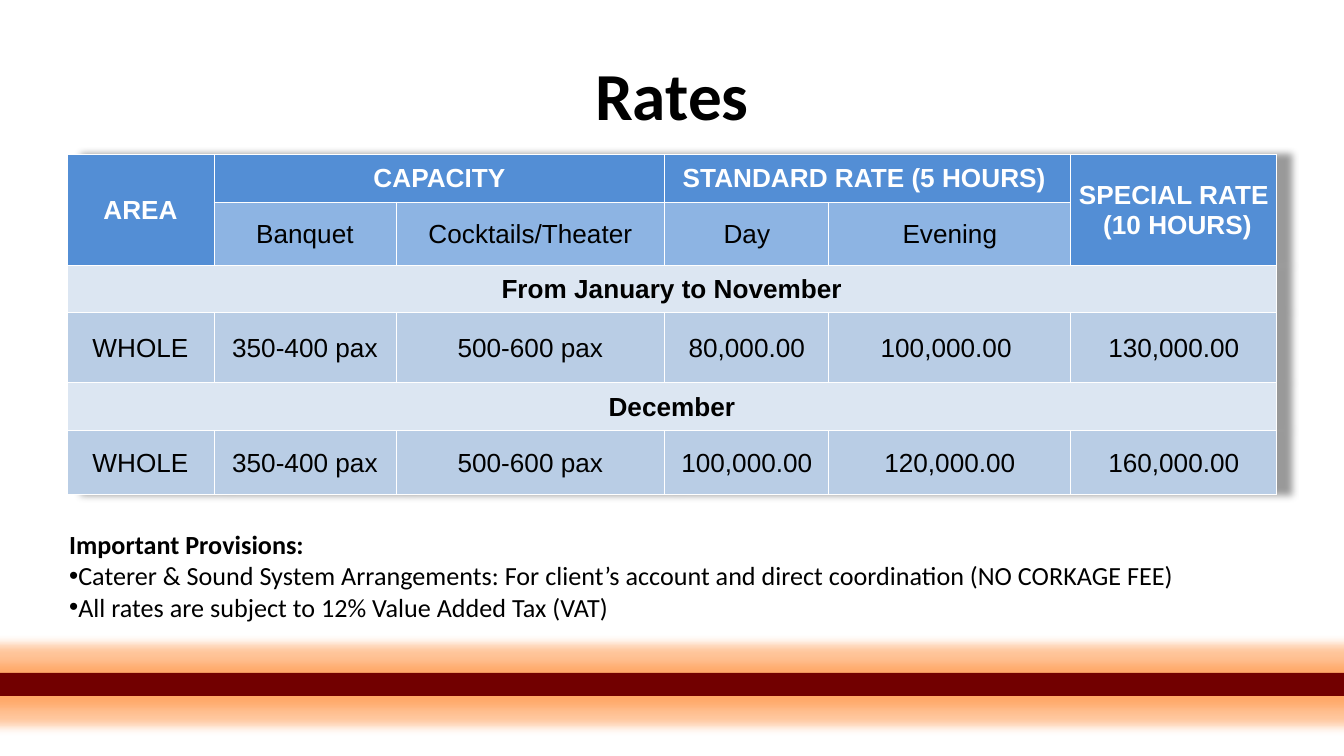
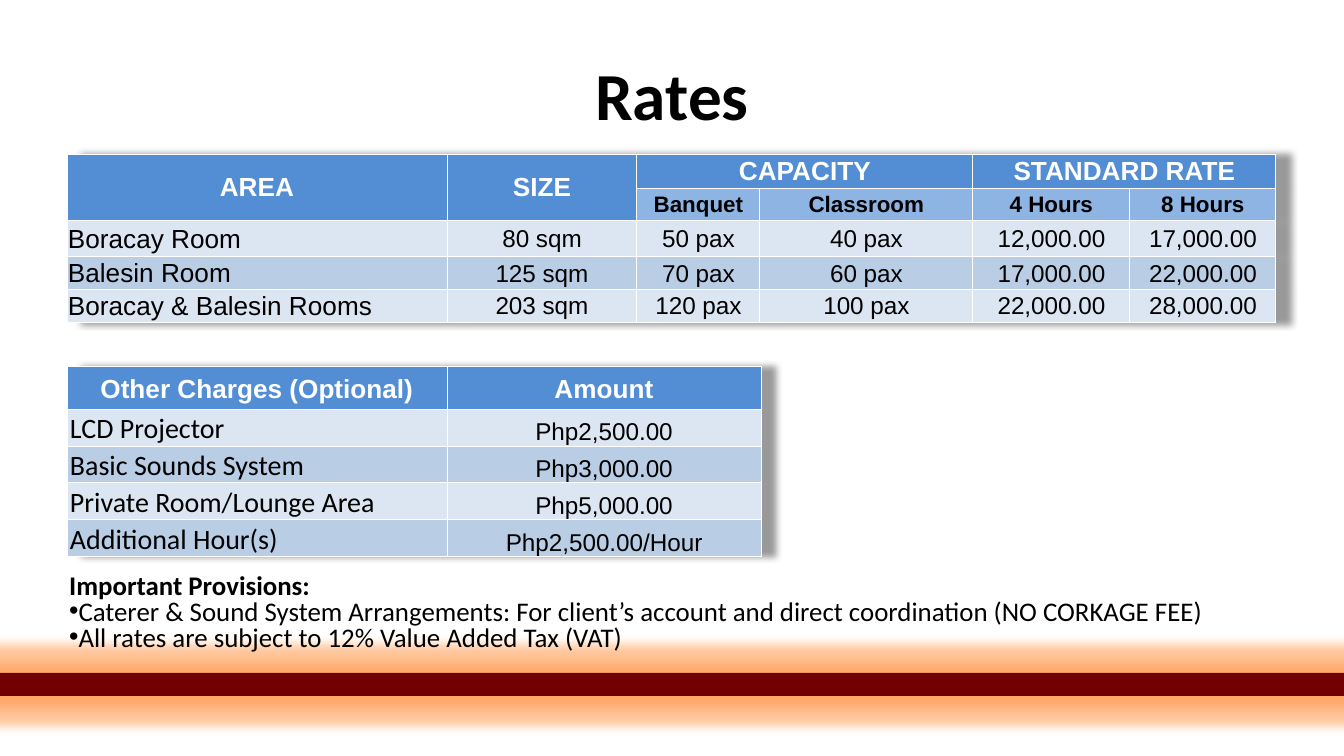
from dataclasses import dataclass, replace
from typing import Optional

from lxml.etree import SubElement
from pptx import Presentation
from pptx.dml.color import RGBColor
from pptx.enum.shapes import MSO_SHAPE
from pptx.enum.text import MSO_ANCHOR, PP_ALIGN
from pptx.oxml import parse_xml
from pptx.oxml.ns import nsdecls, qn
from pptx.util import Pt

COLORS = {
    "black": "000000",
    "white": "FFFFFF",
    "maroon": "720000",
    "glow": "FF8B35",
    "header": "538ED5",
    "subheader": "8DB4E3",
    "light": "DCE6F2",
    "medium": "B9CDE5",
}
PX_PER_INCH = 134.4
SLIDE_WIDTH, SLIDE_HEIGHT = 1344, 756
MARGIN, CONTENT_WIDTH = 67, 1210
LEFT, UP = "<", "^"

PROVISIONS = [
    "Important Provisions:",
    "Caterer & Sound System Arrangements: For client’s account and direct coordination (NO CORKAGE FEE)",
    "All rates are subject to 12% Value Added Tax (VAT)",
]


def px(value: int) -> int:
    return round(value * 914400 / PX_PER_INCH)


def rgb(name: str) -> RGBColor:
    return RGBColor.from_string(COLORS[name])


@dataclass(frozen=True)
class CellStyle:
    fill: str
    color: str = "black"
    size: float = 14
    bold: bool = False
    font: str = "Arial"
    align: PP_ALIGN = PP_ALIGN.CENTER
    anchor: MSO_ANCHOR = MSO_ANCHOR.MIDDLE


@dataclass(frozen=True)
class Row:
    height: int
    texts: list[str]
    style: CellStyle
    first: Optional[CellStyle] = None


@dataclass(frozen=True)
class RateTable:
    top: int
    columns: list[int]
    rows: list[Row]
    inset: int = 1


@dataclass(frozen=True)
class Provisions:
    top: int
    height: int
    size: float
    line_spacing: float


@dataclass(frozen=True)
class RateSlide:
    tables: list[RateTable]
    provisions: Provisions


HEADER = CellStyle("header", "white", bold=True)
SUBHEADER = CellStyle("subheader")
SMALL_SUBHEADER = replace(SUBHEADER, size=12, bold=True)
PERIOD = CellStyle("light", bold=True)
WHOLE = CellStyle("medium")


def room_row(height: int, fill: str, texts: list[str]) -> Row:
    return Row(height, texts, CellStyle(fill, size=13),
               CellStyle(fill, align=PP_ALIGN.LEFT))


def charge_row(height: int, fill: str, texts: list[str]) -> Row:
    amount = CellStyle(fill, size=13, anchor=MSO_ANCHOR.BOTTOM)
    return Row(height, texts, amount,
               replace(amount, size=15, font="Calibri", align=PP_ALIGN.LEFT))


HALL_RATES = RateTable(154, [147, 182, 269, 164, 242, 206], [
    Row(48, ["AREA", "CAPACITY", LEFT, "STANDARD RATE (5 HOURS) ", LEFT,
             "SPECIAL RATE\n (10 HOURS)"], HEADER),
    Row(60, [UP, "Banquet", "Cocktails/Theater", "Day", "Evening", UP], SUBHEADER),
    Row(47, ["From January to November"] + [LEFT] * 5, PERIOD),
    Row(70, ["WHOLE", "350-400 pax", "500-600 pax", "80,000.00", "100,000.00 ",
             "130,000.00"], WHOLE),
    Row(48, ["December"] + [LEFT] * 5, PERIOD),
    Row(64, ["WHOLE", "350-400 pax", "500-600 pax", "100,000.00", "120,000.00",
             "160,000.00"], WHOLE),
])

ROOM_RATES = RateTable(154, [380, 190, 123, 213, 157, 146], [
    Row(34, ["AREA", "SIZE", "CAPACITY", LEFT, "STANDARD RATE", LEFT], HEADER),
    Row(33, [UP, UP, "Banquet", "Classroom", "4 Hours", "8 Hours"], SMALL_SUBHEADER),
    room_row(36, "light", ["Boracay Room", "80 sqm", "50 pax", "40 pax",
                           "12,000.00", "17,000.00"]),
    room_row(33, "medium", ["Balesin Room", "125 sqm", "70 pax", "60 pax",
                            "17,000.00", "22,000.00"]),
    room_row(31, "light", ["Boracay & Balesin Rooms", "203 sqm", "120 pax", "100 pax",
                           "22,000.00", "28,000.00"]),
])

OTHER_CHARGES = RateTable(366, [380, 314], [
    Row(43, ["Other Charges (Optional)", "Amount"], HEADER),
    charge_row(37, "light", ["LCD Projector", "Php2,500.00"]),
    charge_row(36, "medium", ["Basic Sounds System", "Php3,000.00"]),
    charge_row(37, "light", ["Private Room/Lounge Area", "Php5,000.00"]),
    charge_row(36, "medium", ["Additional Hour(s)", "Php2,500.00/Hour"]),
], inset=3)

SLIDES = [
    RateSlide([HALL_RATES], Provisions(524, 103, 14, 1.0)),
    RateSlide([ROOM_RATES, OTHER_CHARGES], Provisions(558, 111, 14.4, 0.8)),
]


def set_font(paragraph, font: str, size: float, color: str, bold: bool) -> None:
    paragraph.font.name = font
    paragraph.font.size = Pt(size)
    paragraph.font.bold = bold
    paragraph.font.color.rgb = rgb(color)


def effect_list(effect: str, color: str, alpha: int):
    return parse_xml(
        f'<a:effectLst {nsdecls("a")}><a:{effect}><a:srgbClr val="{COLORS[color]}">'
        f'<a:alpha val="{alpha * 1000}"/></a:srgbClr></a:{effect.split()[0]}></a:effectLst>')


def add_band(slide) -> None:
    band = slide.shapes.add_shape(MSO_SHAPE.RECTANGLE, 0, px(673), px(SLIDE_WIDTH), px(23))
    band.fill.solid()
    band.fill.fore_color.rgb = rgb("maroon")
    band.line.fill.background()
    properties = band._element.spPr
    properties.append(effect_list(f'glow rad="{px(20)}"', "glow", 50))


def add_text_frame(slide, left: int, top: int, width: int, height: int):
    box = slide.shapes.add_textbox(px(left), px(top), px(width), px(height))
    frame = box.text_frame
    frame.word_wrap = True
    frame.vertical_anchor = MSO_ANCHOR.MIDDLE
    return frame


def add_title(slide) -> None:
    frame = add_text_frame(slide, MARGIN, 31, CONTENT_WIDTH, 126)
    frame.text = "Rates"
    paragraph = frame.paragraphs[0]
    paragraph.alignment = PP_ALIGN.CENTER
    set_font(paragraph, "Calibri", 36, "black", True)


def add_provisions(slide, provisions: Provisions) -> None:
    frame = add_text_frame(slide, 56, provisions.top, CONTENT_WIDTH, provisions.height)
    frame.text = "\n".join(PROVISIONS)
    for index, paragraph in enumerate(frame.paragraphs):
        paragraph.line_spacing = provisions.line_spacing
        if index:
            properties = paragraph._p.get_or_add_pPr()
            properties.set("marL", "0")
            properties.set("indent", "0")
            SubElement(properties, qn("a:buFont"), typeface="Arial")
            SubElement(properties, qn("a:buChar"), char="•")
        set_font(paragraph, "Calibri", provisions.size, "black", index == 0)


def style_cell(cell, style: CellStyle, inset: int) -> None:
    cell.margin_left = cell.margin_right = cell.margin_top = px(inset)
    cell.margin_bottom = 0
    cell.vertical_anchor = style.anchor
    properties = cell._tc.get_or_add_tcPr()
    for side in "LRTB":
        border = SubElement(properties, qn(f"a:ln{side}"), w=str(Pt(0.5)))
        fill = SubElement(border, qn("a:solidFill"))
        SubElement(fill, qn("a:srgbClr"), val=COLORS["white"])
    cell.fill.solid()
    cell.fill.fore_color.rgb = rgb(style.fill)
    for paragraph in cell.text_frame.paragraphs:
        paragraph.alignment = style.align
        set_font(paragraph, style.font, style.size, style.color, style.bold)


def merge_cells(table, rows: list[Row]) -> None:
    for row_index, row in enumerate(rows):
        for column_index, text in enumerate(row.texts):
            if text in (LEFT, UP):
                continue
            right, bottom = column_index, row_index
            while right + 1 < len(row.texts) and row.texts[right + 1] == LEFT:
                right += 1
            while bottom + 1 < len(rows) and rows[bottom + 1].texts[column_index] == UP:
                bottom += 1
            if (right, bottom) != (column_index, row_index):
                table.cell(row_index, column_index).merge(table.cell(bottom, right))


def add_rate_table(slide, rate_table: RateTable) -> None:
    rows, columns = rate_table.rows, rate_table.columns
    frame = slide.shapes.add_table(
        len(rows), len(columns), px(MARGIN), px(rate_table.top),
        px(sum(columns)), px(sum(row.height for row in rows)))
    table = frame.table
    table.first_row = table.horz_banding = False
    shadow = f'outerShdw blurRad="{px(7)}" dist="{px(14)}" dir="0" algn="l" rotWithShape="0"'
    table._tbl.tblPr.insert(0, effect_list(shadow, "black", 40))
    for column, width in zip(table.columns, columns):
        column.width = px(width)
    for row_index, row in enumerate(rows):
        table.rows[row_index].height = px(row.height)
        for column_index, text in enumerate(row.texts):
            cell = table.cell(row_index, column_index)
            if text not in (LEFT, UP):
                cell.text = text
            style = row.first if row.first and column_index == 0 else row.style
            style_cell(cell, style, rate_table.inset)
    merge_cells(table, rows)


def main() -> None:
    presentation = Presentation()
    presentation.slide_width = px(SLIDE_WIDTH)
    presentation.slide_height = px(SLIDE_HEIGHT)
    for rate_slide in SLIDES:
        slide = presentation.slides.add_slide(presentation.slide_layouts[6])
        add_band(slide)
        add_title(slide)
        for rate_table in rate_slide.tables:
            add_rate_table(slide, rate_table)
        add_provisions(slide, rate_slide.provisions)
    presentation.save("out.pptx")


if __name__ == "__main__":
    main()
